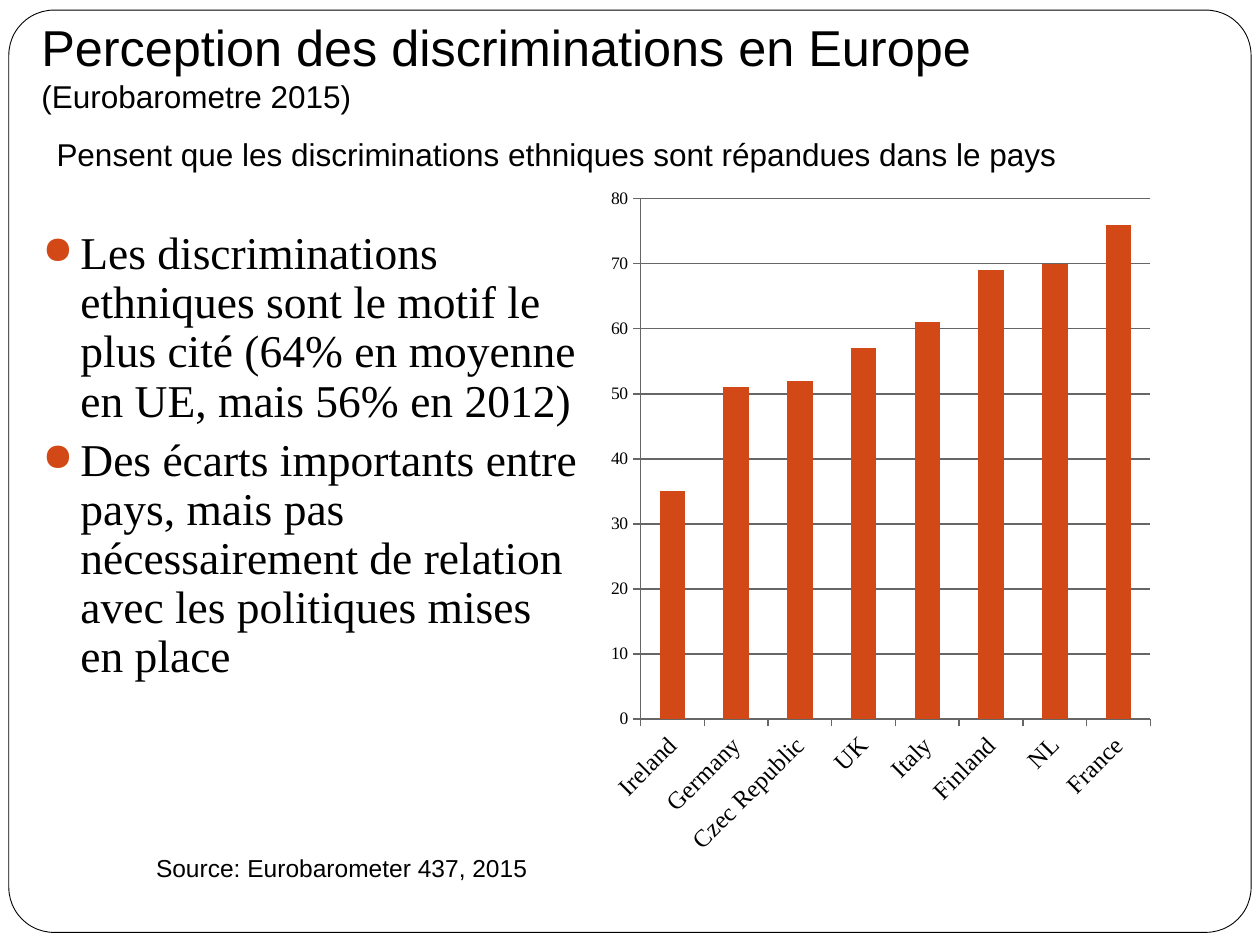
from dataclasses import dataclass

from lxml import etree
from pptx import Presentation
from pptx.chart.data import CategoryChartData
from pptx.dml.color import RGBColor
from pptx.enum.chart import XL_CHART_TYPE as ChartType, XL_TICK_MARK as Tick
from pptx.enum.shapes import MSO_SHAPE as Preset
from pptx.enum.text import MSO_ANCHOR as Anchor
from pptx.oxml.ns import qn
from pptx.util import Inches, Pt


@dataclass(frozen=True)
class Theme:
    black: RGBColor = RGBColor(0, 0, 0)
    white: RGBColor = RGBColor(255, 255, 255)
    accent: RGBColor = RGBColor.from_string("D34817")
    grid: RGBColor = RGBColor.from_string("666666")
    sans: str = "Arial"
    serif: str = "Times New Roman"
    title: float = 28.8
    subtitle: float = 18
    body: float = 26
    source: float = 14
    countries: float = 14
    chart: float = 10


theme = Theme()


def style(font, face, size):
    values = {"name": face, "size": Pt(size), "bold": False}
    for key, value in values.items():
        setattr(font, key, value)
    font.color.rgb = theme.black


def add_text(place, wrap=True, **frame_format):
    frame = slide.shapes.add_textbox(*map(Inches, place)).text_frame
    frame.word_wrap = wrap
    for key, value in frame_format.items():
        setattr(frame, key, value)
    return frame


deck = Presentation()
deck.slide_width, deck.slide_height = Inches(10), Inches(7.5)
slide = deck.slides.add_slide(deck.slide_layouts[6])

# Rounded frame
border = slide.shapes.add_shape(
    Preset.ROUNDED_RECTANGLE, *map(Inches, (0.07, 0.08, 9.86, 7.32)))
border.adjustments[0] = 0.049
border.shadow.inherit = False
border.fill.solid()
border.fill.fore_color.rgb = theme.white
border.line.color.rgb = theme.black
border.line.width = Pt(0.5)

# Title with smaller second line
heading = add_text((0.23, 0.34, 9.75, 0.67), vertical_anchor=Anchor.BOTTOM,
                   margin_bottom=Inches(0.1)).paragraphs[0]
main_title = heading.add_run()
main_title.text = "Perception des discriminations en Europe"
style(main_title.font, theme.sans, theme.title)
heading.add_line_break()
survey = heading.add_run()
survey.text = "(Eurobarometre 2015)"
style(survey.font, theme.sans, theme.subtitle)

# Bulleted findings
findings = [
    "Les discriminations ethniques sont le motif le plus cité "
    "(64% en moyenne en UE, mais 56% en 2012)",
    "Des écarts importants entre pays, mais pas nécessairement de relation "
    "avec les politiques mises en place",
]
findings_frame = add_text((0.24, 1.78, 4.46, 4.47))
for index, finding in enumerate(findings):
    item = findings_frame.add_paragraph() if index else findings_frame.paragraphs[0]
    item.line_spacing = 0.9
    item.space_before = Pt(5.8)
    run = item.add_run()
    run.text = finding
    style(run.font, theme.serif, theme.body)
    properties = item._p.get_or_add_pPr()
    properties.set("marL", str(Inches(0.3)))
    properties.set("indent", str(Inches(-0.3)))
    bullet_color = etree.SubElement(properties, qn("a:buClr"))
    etree.SubElement(bullet_color, qn("a:srgbClr"), val=str(theme.accent))
    etree.SubElement(properties, qn("a:buSzPct"), val="85000")
    etree.SubElement(properties, qn("a:buChar"), char="●")

# Chart caption and source
captions = [
    ((0.35, 1.02, 8.21, 0.4), theme.subtitle,
     "Pensent que les discriminations ethniques sont répandues dans le pays"),
    ((1.14, 6.72, 3.16, 0.34), theme.source, "Source: Eurobarometer 437, 2015"),
]
for place, size, words in captions:
    caption = add_text(place, wrap=False).paragraphs[0].add_run()
    caption.text = words
    style(caption.font, theme.sans, size)

# Column chart of perceived discrimination
perception = {"Ireland": 35, "Germany": 51, "Czec Republic": 52, "UK": 57,
              "Italy": 61, "Finland": 69, "NL": 70, "France": 76}
chart_data = CategoryChartData()
chart_data.categories = list(perception)
chart_data.add_series("Series 1", list(perception.values()))
chart = slide.shapes.add_chart(
    ChartType.COLUMN_CLUSTERED, *map(Inches, (4.76, 1.39, 4.46, 5.5)), chart_data).chart
chart.has_legend = False
chart.has_title = False
style(chart.font, theme.serif, theme.chart)

columns = chart.plots[0]
columns.gap_width = 150
columns.vary_by_categories = False
fill = columns.series[0].format.fill
fill.solid()
fill.fore_color.rgb = theme.accent

countries, percent = chart.category_axis, chart.value_axis
for key, value in {"minimum_scale": 0, "maximum_scale": 80, "major_unit": 10,
                   "has_major_gridlines": True}.items():
    setattr(percent, key, value)
for axis, size in ((countries, theme.countries), (percent, theme.chart)):
    axis.major_tick_mark = Tick.OUTSIDE
    axis.minor_tick_mark = Tick.NONE
    style(axis.tick_labels.font, theme.serif, size)
for line in (countries.format.line, percent.format.line,
             percent.major_gridlines.format.line):
    line.color.rgb = theme.grid
    line.width = Pt(0.75)

# Slanted country labels
label_body = countries._element.find(qn("c:txPr")).find(qn("a:bodyPr"))
label_body.set("rot", "-2700000")
label_body.set("vert", "horz")

deck.save("out.pptx")
